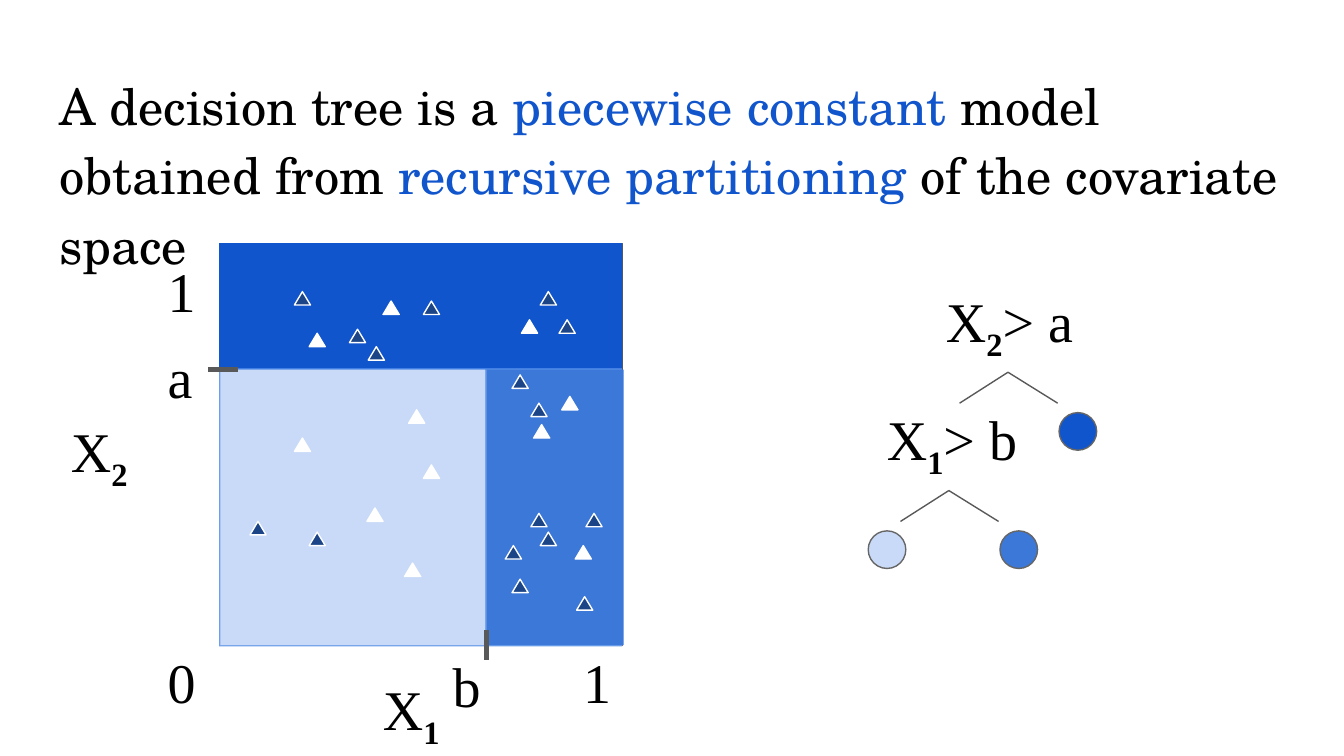
from typing import NamedTuple, Optional

from lxml.etree import SubElement
from pptx import Presentation
from pptx.dml.color import RGBColor
from pptx.enum.shapes import MSO_CONNECTOR, MSO_SHAPE
from pptx.enum.text import MSO_ANCHOR, MSO_AUTO_SIZE, PP_ALIGN
from pptx.oxml.ns import qn
from pptx.util import Emu, Pt

PX = 9144  # EMU per px, 100 px to the inch
COLORS = {
    "ink": "000000", "accent": "1155CC", "top": "1155CC", "base": "4A86E8",
    "lower": "6D9EEB", "right": "3C78D8", "left": "C9DAF8", "dark": "1C4587",
    "light": "FFFFFF", "axis": "595959", "ring": "666666",
}
TITLE_FONT, LABEL_FONT = "TeX Gyre Schola", "Times New Roman"


class Box(NamedTuple):
    left: int
    top: int
    width: int
    height: int


class Region(NamedTuple):
    box: Box
    color: str
    line: Optional[str] = None


class Label(NamedTuple):
    box: Box
    text: str
    subscript: str = ""
    rest: str = ""


class Line(NamedTuple):
    x1: int
    y1: int
    x2: int
    y2: int
    width: float


REGIONS = [
    Region(Box(164, 181, 299, 299), "base", "axis"),
    Region(Box(163, 181, 300, 93), "top"),
    Region(Box(163, 275, 300, 206), "lower"),
    Region(Box(362, 275, 102, 205), "right"),
    Region(Box(164, 275, 197, 205), "left"),
]
TICKS = [Line(155, 275, 177, 275, 3), Line(362, 469, 362, 491, 3)]
LABELS = [
    Label(Box(115, 245, 40, 71), "a"),
    Label(Box(327, 475, 40, 71), "b"),
    Label(Box(115, 472, 40, 71), "0"),
    Label(Box(424, 472, 40, 71), "1"),
    Label(Box(115, 181, 40, 71), "1"),
    Label(Box(43, 300, 76, 71), "X", "2"),
    Label(Box(275, 492, 72, 71), "X", "1"),
    Label(Box(650, 291, 128, 66), "X", "1", "> b"),
    Label(Box(694, 203, 128, 66), "X", "2", "> a"),
]
# Left and top of each observation, by class
POINTS = {
    "dark": [
        (402, 217), (416, 238), (381, 279), (395, 382), (402, 396), (381, 431),
        (429, 444), (436, 382), (219, 217), (260, 245), (274, 258), (315, 224),
        (376, 406), (230, 396), (395, 300), (186, 388),
    ],
    "light": [
        (219, 326), (304, 305), (315, 346), (418, 295), (397, 316), (273, 378),
        (301, 419), (388, 238), (428, 406), (285, 224), (230, 248),
    ],
}
SPLITS = [(750, 277), (706, 365)]  # apex of each fork
LEAVES = [(788, 307, "top"), (744, 395, "right"), (646, 395, "left")]


def rgb(color: str) -> RGBColor:
    return RGBColor.from_string(COLORS[color])


def emu(box: Box) -> list[Emu]:
    return [Emu(length * PX) for length in box]


def add_filled(slide, kind: MSO_SHAPE, box: Box, color: str, line: Optional[str]) -> None:
    shape = slide.shapes.add_shape(kind, *emu(box))
    shape.shadow.inherit = False
    shape.fill.solid()
    shape.fill.fore_color.rgb = rgb(color)
    if line:
        shape.line.color.rgb = rgb(line)
        shape.line.width = Pt(0.75)
    else:
        shape.line.fill.background()


def add_line(slide, line: Line) -> None:
    ends = [Emu(length * PX) for length in line[:4]]
    connector = slide.shapes.add_connector(MSO_CONNECTOR.STRAIGHT, *ends)
    connector.line.color.rgb = rgb("axis")
    connector.line.width = Pt(line.width)
    SubElement(connector._element.spPr, qn("a:effectLst"))


def prepare_frame(shape, font_name: str, size: int):
    """Set up an inset, top-anchored text frame and return its paragraph."""
    frame = shape.text_frame
    frame.word_wrap = True
    frame.auto_size = MSO_AUTO_SIZE.NONE
    frame.vertical_anchor = MSO_ANCHOR.TOP
    frame.margin_left = frame.margin_right = Emu(10 * PX)
    frame.margin_top = frame.margin_bottom = Emu(10 * PX)
    paragraph = frame.paragraphs[0]
    paragraph.alignment = PP_ALIGN.LEFT
    paragraph.font.name = font_name
    paragraph.font.size = Pt(size)
    paragraph.font.color.rgb = rgb("ink")
    return paragraph


def add_run(paragraph, text: str):
    run = paragraph.add_run()
    run.text = text
    return run


def add_label(slide, label: Label) -> None:
    shape = slide.shapes.add_textbox(*emu(label.box))
    paragraph = prepare_frame(shape, LABEL_FONT, 30)
    add_run(paragraph, label.text)
    if label.subscript:
        run = add_run(paragraph, label.subscript)
        run.font.bold = True
        run.font._element.set("baseline", "-25000")
    if label.rest:
        add_run(paragraph, label.rest)


def fill_title(slide) -> None:
    title = slide.shapes.title
    title.left, title.top, title.width, title.height = emu(Box(34, 39, 932, 261))
    paragraph = prepare_frame(title, TITLE_FONT, 27)
    paragraph.line_spacing = 1.15
    parts = ["A decision tree is a ", "piecewise constant", " model obtained from ",
             "recursive partitioning", " of the covariate space"]
    for index, text in enumerate(parts):
        run = add_run(paragraph, text)
        if index % 2:
            run.font.color.rgb = rgb("accent")


def main() -> None:
    presentation = Presentation()
    presentation.slide_width, presentation.slide_height = Emu(1000 * PX), Emu(5143500)
    slide = presentation.slides.add_slide(presentation.slide_layouts[5])
    fill_title(slide)

    # Partitioned covariate space
    for region in REGIONS:
        add_filled(slide, MSO_SHAPE.RECTANGLE, region.box, region.color, region.line)
    for tick in TICKS:
        add_line(slide, tick)
    for color, places in POINTS.items():
        for left, top in places:
            add_filled(slide, MSO_SHAPE.ISOSCELES_TRIANGLE, Box(left, top, 12, 10), color, "light")

    # Axis labels and split conditions
    for label in LABELS:
        add_label(slide, label)

    # Decision tree
    for x, y in SPLITS:
        for reach in (-36, 37):
            add_line(slide, Line(x, y, x + reach, y + 23, 0.75))
    for left, top, color in LEAVES:
        add_filled(slide, MSO_SHAPE.OVAL, Box(left, top, 28, 28), color, "ring")

    presentation.save("out.pptx")


if __name__ == "__main__":
    main()
